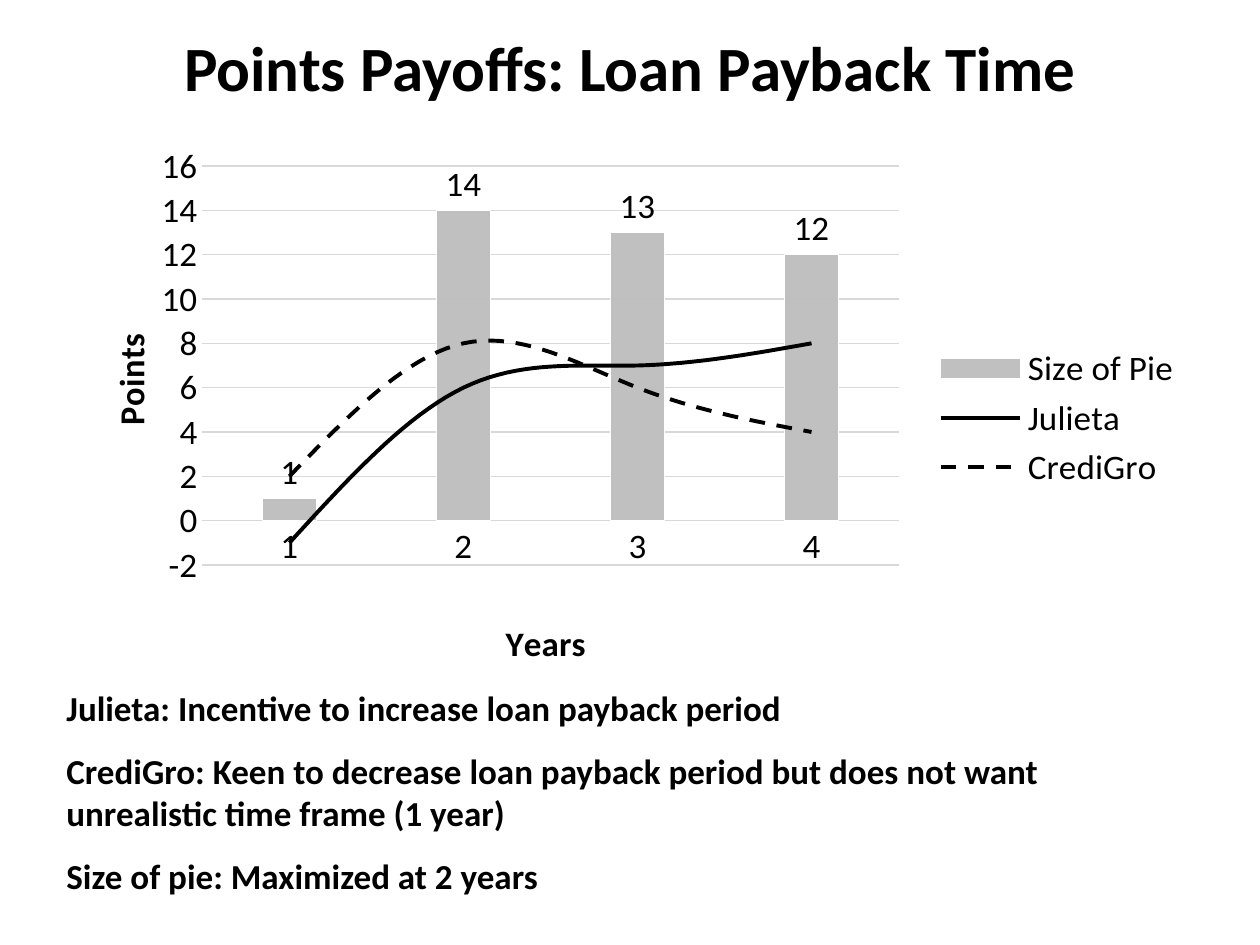
"""Build the slide that compares points payoffs over the loan payback time."""
from dataclasses import dataclass

from lxml import etree
from pptx import Presentation
from pptx import util as u
from pptx.chart.data import CategoryChartData
from pptx.dml.color import RGBColor
from pptx.enum import chart as charts, dml, text
from pptx.oxml import parse_xml
from pptx.oxml.ns import nsdecls, qn


@dataclass(frozen=True)
class Theme:
    font: str = "Calibri"
    ink: RGBColor = RGBColor(0, 0, 0)
    bar: RGBColor = RGBColor(0xBF, 0xBF, 0xBF)
    edge: RGBColor = RGBColor(0xFF, 0xFF, 0xFF)
    grid: RGBColor = RGBColor(0xD9, 0xD9, 0xD9)
    title_size: u.Pt = u.Pt(36)
    text_size: u.Pt = u.Pt(20)
    hairline: u.Pt = u.Pt(0.75)
    curve: u.Pt = u.Pt(2.25)


theme = Theme()


def style_font(font, size, bold=False):
    font.name, font.size, font.bold = theme.font, size, bold
    font.color.rgb = theme.ink


def set_layout(parent, index, **values):
    for old_layout in parent.findall(qn("c:layout")):
        parent.remove(old_layout)
    layout = parse_xml(f"<c:layout {nsdecls('c')}><c:manualLayout/></c:layout>")
    for name, value in values.items():
        etree.SubElement(layout[0], qn(f"c:{name}")).set("val", str(value))
    parent.insert(index, layout)


presentation = Presentation()
presentation.slide_width, presentation.slide_height = u.Cm(25.4), u.Cm(19.05)
slide = presentation.slides.add_slide(presentation.slide_layouts[5])

title = slide.shapes.title
title.left, title.top, title.width, title.height = u.Cm(0), u.Cm(-0.25), u.Cm(25.4), u.Cm(3.18)
title.text_frame.text = "Points Payoffs: Loan Payback Time"
title.text_frame.vertical_anchor = text.MSO_ANCHOR.MIDDLE
title.text_frame.paragraphs[0].alignment = text.PP_ALIGN.CENTER
style_font(title.text_frame.paragraphs[0].runs[0].font, theme.title_size, True)

notes = [
    "Julieta: Incentive to increase loan payback period",
    "CrediGro: Keen to decrease loan payback period but does not want unrealistic time frame (1 year)",
    "Size of pie: Maximized at 2 years",
]
takeaways = slide.shapes.add_textbox(u.Cm(1.09), u.Cm(13.72), u.Cm(23.01), u.Cm(4.9))
takeaways.text_frame.word_wrap = True
takeaways.text_frame.text = "\n".join(notes)
for paragraph in takeaways.text_frame.paragraphs:
    paragraph.space_after = u.Pt(12)
    style_font(paragraph.runs[0].font, theme.text_size, True)

payoffs = CategoryChartData()
payoffs.categories = ["1", "2", "3", "4"]
payoffs.add_series("Size of Pie", [1, 14, 13, 12])
payoffs.add_series("Julieta", [-1, 6, 7, 8])
payoffs.add_series("CrediGro", [2, 8, 6, 4])
chart = slide.shapes.add_chart(
    charts.XL_CHART_TYPE.COLUMN_CLUSTERED,
    u.Cm(1.09), u.Cm(2.92), u.Cm(23.01), u.Cm(10.8), payoffs,
).chart
chart.has_title = False
style_font(chart.font, theme.text_size)
chart.has_legend = True
chart.legend.position = charts.XL_LEGEND_POSITION.RIGHT
chart.legend.include_in_layout = False
style_font(chart.legend.font, theme.text_size)

columns = chart.plots[0]
columns.vary_by_categories = False
columns.gap_width, columns.overlap = 219, -27
pie = columns.series[0]
pie.format.fill.solid()
pie.format.fill.fore_color.rgb = theme.bar
bar_color = pie.format.fill._xPr.find(".//" + qn("a:srgbClr"))
etree.SubElement(bar_color, qn("a:alpha")).set("val", "98000")
pie.format.line.color.rgb = theme.edge
pie.format.line.width = theme.hairline
labels = pie.data_labels
labels.show_value = True
labels.position = charts.XL_LABEL_POSITION.OUTSIDE_END
style_font(labels.font, theme.text_size)

bar_chart = columns._element
line_chart = parse_xml(
    f'<c:lineChart {nsdecls("c")}><c:grouping val="standard"/><c:varyColors val="0"/></c:lineChart>'
)
for series in bar_chart.findall(qn("c:ser"))[1:]:
    for bar_only in series.findall(qn("c:invertIfNegative")):
        series.remove(bar_only)
    line_chart.append(series)
etree.SubElement(line_chart, qn("c:marker")).set("val", "1")
for axis_id in bar_chart.findall(qn("c:axId")):
    etree.SubElement(line_chart, qn("c:axId")).set("val", axis_id.get("val"))
bar_chart.addnext(line_chart)

dashes = [dml.MSO_LINE.SOLID, dml.MSO_LINE.DASH]
for series, dash in zip(chart.plots[1].series, dashes):
    series.smooth = True
    series.marker.style = charts.XL_MARKER_STYLE.NONE
    series.format.line.color.rgb = theme.ink
    series.format.line.width = theme.curve
    series.format.line.dash_style = dash

axes = [
    (chart.category_axis, "Years", 0.39, 0.87, "0"),
    (chart.value_axis, "Points", 0.04, 0.33, "-5400000"),
]
for axis, name, x, y, rotation in axes:
    axis.major_tick_mark = axis.minor_tick_mark = charts.XL_TICK_MARK.NONE
    style_font(axis.tick_labels.font, theme.text_size)
    frame = axis.axis_title.text_frame
    frame.text = name
    style_font(frame.paragraphs[0].runs[0].font, theme.text_size, True)
    frame._txBody.bodyPr.set("rot", rotation)
    frame._txBody.bodyPr.set("vert", "horz")
    set_layout(axis.axis_title._element, 1, xMode="edge", yMode="edge", x=x, y=y)

chart.category_axis.has_major_gridlines = False
value_axis = chart.value_axis
value_axis.minimum_scale, value_axis.maximum_scale, value_axis.major_unit = -2, 16, 2
value_axis.has_major_gridlines = True
value_axis.format.line.fill.background()
for line in (chart.category_axis.format.line, value_axis.major_gridlines.format.line):
    line.color.rgb = theme.grid
    line.width = theme.hairline
set_layout(
    bar_chart.getparent(), 0, layoutTarget="inner",
    xMode="edge", yMode="edge", x=0.13, y=0.02, w=0.61, h=0.76,
)

presentation.save("out.pptx")
